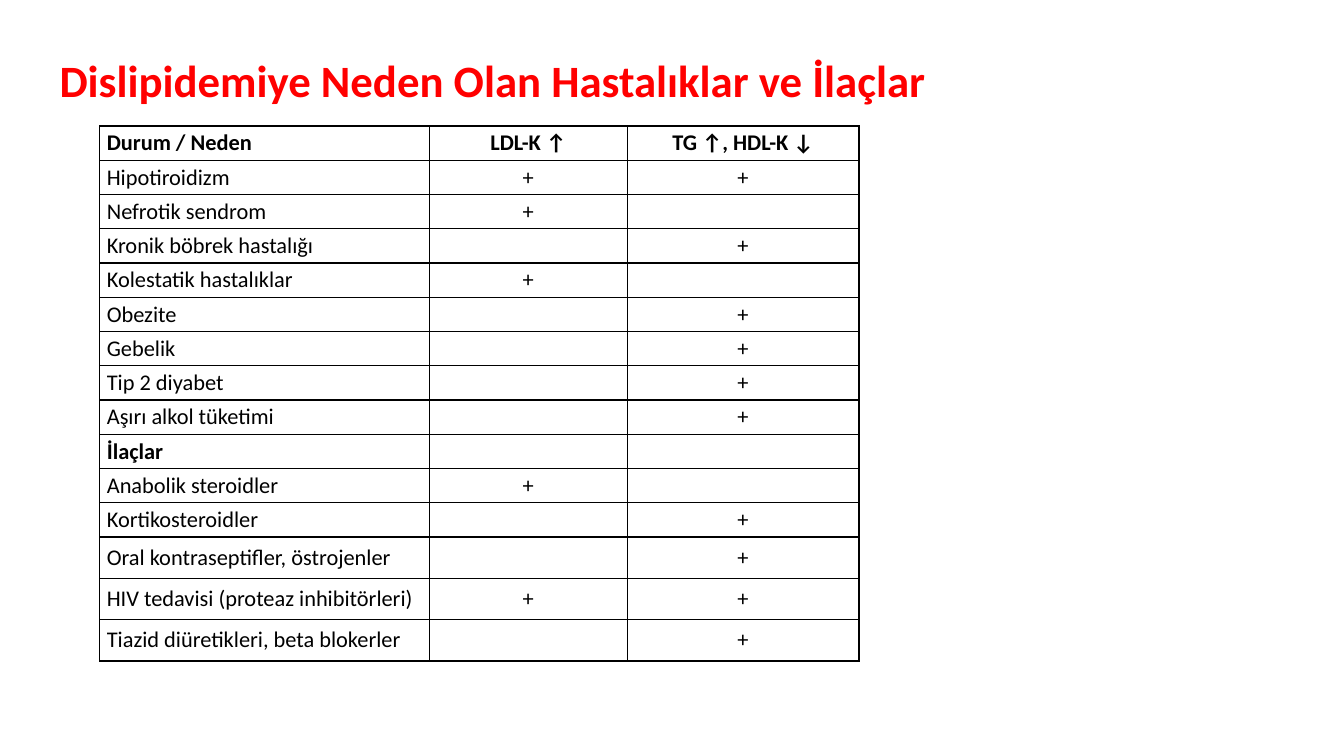
from lxml import etree
from pptx import Presentation
from pptx.dml.color import RGBColor
from pptx.enum.text import MSO_ANCHOR, PP_ALIGN
from pptx.oxml.ns import qn
from pptx.util import Inches, Pt

MIDDLE = MSO_ANCHOR.MIDDLE
LEFT, CENTER = PP_ALIGN.LEFT, PP_ALIGN.CENTER
RED = RGBColor(0xFF, 0, 0)
BLACK = RGBColor(0, 0, 0)
FONT = "Calibri"
WIDTHS = (3.27, 1.96, 2.3)
LOW, HIGH = 0.34, 0.41
HEADS = ("Durum / Neden", "LDL-K ↑", "TG ↑, HDL-K ↓")
DRUGS = "İlaçlar"
CAUSES = (
    ("Hipotiroidizm", "+", "+"),
    ("Nefrotik sendrom", "+", ""),
    ("Kronik böbrek hastalığı", "", "+"),
    ("Kolestatik hastalıklar", "+", ""),
    ("Obezite", "", "+"),
    ("Gebelik", "", "+"),
    ("Tip 2 diyabet", "", "+"),
    ("Aşırı alkol tüketimi", "", "+"),
    (DRUGS, "", ""),
    ("Anabolik steroidler", "+", ""),
    ("Kortikosteroidler", "", "+"),
    ("Oral kontraseptifler, östrojenler", "", "+"),
    ("HIV tedavisi (proteaz inhibitörleri)", "+", "+"),
    ("Tiazid diüretikleri, beta blokerler", "", "+"),
)


def style(font, size, color, bold):
    """Set the look of a run's font."""
    font.name, font.size, font.bold = FONT, Pt(size), bold
    font.color.rgb = color


def add_title(slide, box):
    """Place the heading in the title placeholder."""
    title = slide.shapes.title
    title.left, title.top, title.width, title.height = map(Inches, box)
    frame = title.text_frame
    frame.text = "Dislipidemiye Neden Olan Hastalıklar ve İlaçlar"
    frame.vertical_anchor = MIDDLE
    line = frame.paragraphs[0]
    line.alignment, line.line_spacing = LEFT, 0.9
    style(line.runs[0].font, 32, RED, True)


def add_border(cell):
    """Draw a thin black line on all four sides of a cell."""
    props = cell._tc.get_or_add_tcPr()
    for place, side in enumerate(("lnL", "lnR", "lnT", "lnB")):
        edge = etree.Element(qn(f"a:{side}"), w=str(Pt(1)))
        fill = etree.SubElement(edge, qn("a:solidFill"))
        etree.SubElement(fill, qn("a:srgbClr"), val=str(BLACK))
        props.insert(place, edge)


def fill_cell(cell, text, align, bold):
    """Write one table cell with its margins and border."""
    cell.margin_left = cell.margin_right = Inches(0.07)
    cell.margin_top = cell.margin_bottom = Inches(0.03)
    cell.vertical_anchor = MIDDLE
    cell.fill.background()
    add_border(cell)
    line = cell.text_frame.paragraphs[0]
    line.text, line.alignment = text, align
    for run in line.runs:
        style(run.font, 16, BLACK, bold)
    if not text:
        etree.SubElement(line._p, qn("a:endParaRPr"), sz="1600")


def add_causes(slide, left, top):
    """Place the table of causes with its corner at left and top."""
    rows = (HEADS, *CAUSES)
    highs = [LOW] * (len(rows) - 3) + [HIGH] * 3
    size = map(Inches, (left, top, sum(WIDTHS), sum(highs)))
    table = slide.shapes.add_table(len(rows), len(WIDTHS), *size).table
    table.first_row = table.horz_banding = False
    for column, width in zip(table.columns, WIDTHS):
        column.width = Inches(width)
    for row, high, texts in zip(table.rows, highs, rows):
        row.height = Inches(high)
        bold = texts[0] in (HEADS[0], DRUGS)
        for col, (cell, text) in enumerate(zip(row.cells, texts)):
            fill_cell(cell, text, CENTER if col else LEFT, bold)


def main():
    """Build and save the slide."""
    deck = Presentation()
    deck.slide_width, deck.slide_height = Inches(13.33), Inches(7.5)
    slide = deck.slides.add_slide(deck.slide_layouts[5])
    add_title(slide, (0.49, 0.4, 12.13, 0.85))
    add_causes(slide, 0.99, 1.25)
    deck.save("out.pptx")


if __name__ == "__main__":
    main()
